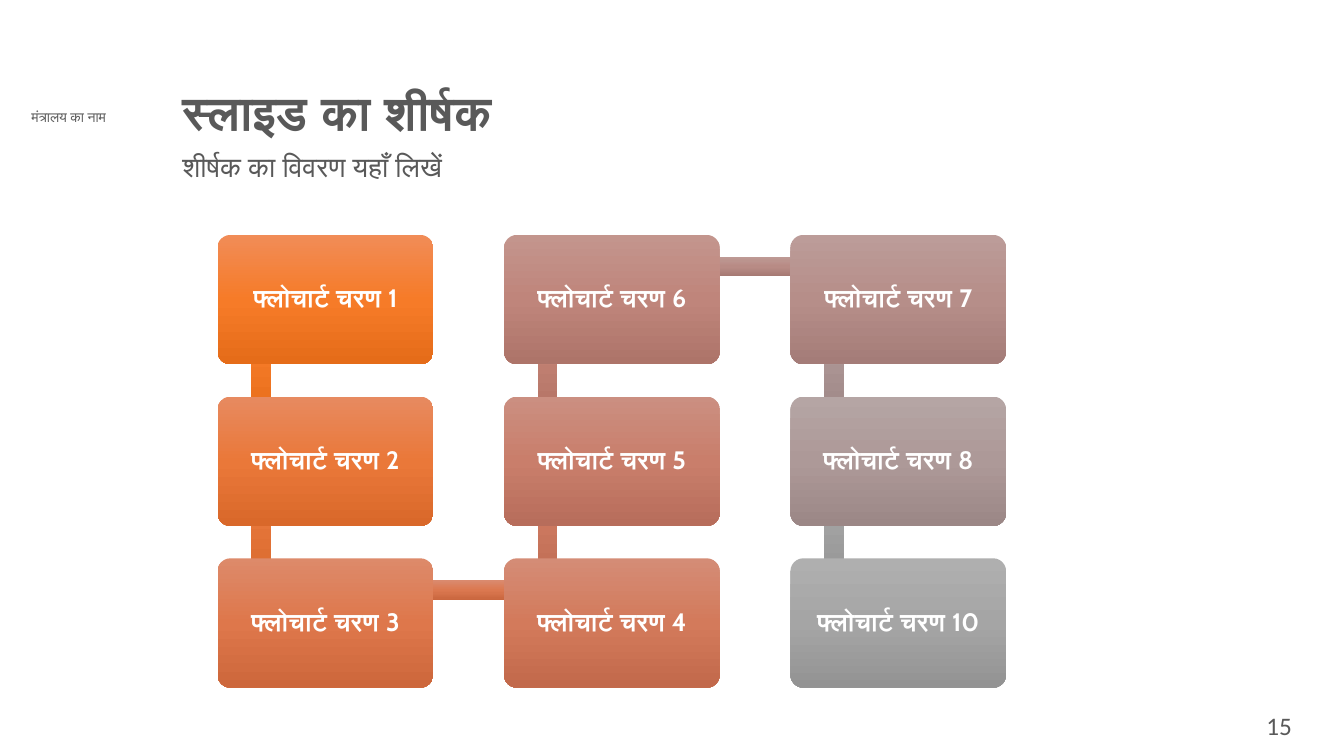
from lxml.etree import SubElement
from pptx import Presentation
from pptx.dml.color import RGBColor
from pptx.enum.shapes import MSO_SHAPE
from pptx.enum.text import MSO_ANCHOR, PP_ALIGN
from pptx.oxml.ns import qn
from pptx.util import Pt

GREY = RGBColor(0x59, 0x59, 0x59)
WHITE = RGBColor(0xFF, 0xFF, 0xFF)


def shades(*values):
    return [RGBColor.from_string(value) for value in values]


# Each step: number, column, row, box gradient, gradient of the bar to the next step
STEPS = [
    (1, 0, 0, shades("F18C57", "F67B28", "E56C19"), shades("F18C57", "F67B28", "E56C19")),
    (2, 0, 1, shades("E78A60", "EA7839", "D9682A"), shades("E58A61", "E8783C", "D7682C")),
    (3, 0, 2, shades("DD8A6A", "DE774B", "CD673B"), shades("DA8A6E", "DB7850", "CA673F")),
    (4, 1, 2, shades("D48C76", "D37A5B", "C2694B"), shades("D08D7B", "CF7B62", "BD6B52")),
    (5, 1, 1, shades("CB8F81", "C97E6B", "B76D5B"), shades("C79288", "C38274", "B17163")),
    (6, 1, 0, shades("C3958D", "BF857B", "AD7469"), shades("BE9A95", "B88B85", "A67A74")),
    (7, 2, 0, shades("BC9C99", "B68E89", "A47C78"), shades("B6A4A2", "AE9796", "9C8584")),
    (8, 2, 1, shades("B5A5A4", "AD9998", "9B8786"), shades("AFAFAF", "A5A5A5", "939393")),
    (10, 2, 2, shades("AFAFAF", "A5A5A5", "939393"), None),
]
BOX_WIDTH, BOX_HEIGHT = 154.1, 92.4
BAR_THICKNESS, BAR_INSET = 14, 0.9
ANCHOR_X, ANCHOR_Y = 31, 22.7  # where bars meet, from a box's top left corner


def write(shape, text, font="Calibri", size=18, color=GREY, bold=False,
          align=PP_ALIGN.LEFT, anchor=MSO_ANCHOR.TOP, spacing=None, inset=None):
    frame = shape.text_frame
    frame.word_wrap = True
    frame.vertical_anchor = anchor
    if inset is not None:
        frame.margin_left = frame.margin_right = Pt(inset)
        frame.margin_top = frame.margin_bottom = Pt(inset)
    paragraph = frame.paragraphs[0]
    paragraph.alignment = align
    paragraph.line_spacing = spacing
    run = paragraph.add_run()
    run.text = text
    run.font.name = font
    run.font.size = Pt(size)
    run.font.bold = bold
    run.font.color.rgb = color


def add_label(slide, left, top, width, height, text, **style):
    box = slide.shapes.add_textbox(Pt(left), Pt(top), Pt(width), Pt(height))
    write(box, text, **style)


def add_block(slide, kind, left, top, width, height, colors):
    """Add a borderless shape shaded from top to bottom."""
    shape = slide.shapes.add_shape(kind, Pt(left), Pt(top), Pt(width), Pt(height))
    shape.shadow.inherit = False
    shape.line.fill.background()
    shape.fill.gradient()
    gradient = shape.fill._fill._gradFill
    gradient.set("rotWithShape", "0")
    for child in list(gradient):
        gradient.remove(child)
    stops = SubElement(gradient, qn("a:gsLst"))
    for position, color in zip((0, 50000, 100000), colors):
        stop = SubElement(stops, qn("a:gs"), pos=str(position))
        SubElement(stop, qn("a:srgbClr"), val=str(color))
    SubElement(gradient, qn("a:lin"), ang="5400000", scaled="0")
    return shape


def add_header(slide, left, top, width):
    add_label(slide, left, top, width, 39.6, "स्लाइड का शीर्षक",
              size=34, bold=True, spacing=0.9)
    add_label(slide, left, top + 45.4, width, 45.4, "शीर्षक का विवरण यहाँ लिखें",
              size=20, spacing=0.9)


def add_flowchart(slide, left, top, width, height):
    pitch_x = (width - BOX_WIDTH) / 2
    pitch_y = (height - BOX_HEIGHT) / 2

    for index, (number, column, row, box_colors, bar_colors) in enumerate(STEPS):
        box_left = left + column * pitch_x
        box_top = top + row * pitch_y

        # Bar to the next step, behind both boxes
        if bar_colors:
            next_column, next_row = STEPS[index + 1][1:3]
            sideways = next_column != column
            length = (pitch_x if sideways else pitch_y) - BAR_INSET
            start_x = box_left + ANCHOR_X
            start_y = top + min(row, next_row) * pitch_y + ANCHOR_Y
            center_x = start_x + (length / 2 if sideways else 0)
            center_y = start_y + (0 if sideways else length / 2)
            bar = add_block(slide, MSO_SHAPE.RECTANGLE, center_x - length / 2,
                            center_y - BAR_THICKNESS / 2, length, BAR_THICKNESS,
                            bar_colors)
            if not sideways:
                bar.rotation = 90 if next_row > row else 270

        # Step box
        box = add_block(slide, MSO_SHAPE.ROUNDED_RECTANGLE, box_left, box_top,
                        BOX_WIDTH, BOX_HEIGHT, box_colors)
        box.adjustments[0] = 0.1
        write(box, f"फ्लोचार्ट चरण {number}", font="Cabin", color=WHITE, bold=True,
              align=PP_ALIGN.CENTER, anchor=MSO_ANCHOR.MIDDLE, spacing=0.9, inset=8)


def main():
    presentation = Presentation()
    presentation.slide_width = Pt(960)
    presentation.slide_height = Pt(540)
    slide = presentation.slides.add_slide(presentation.slide_layouts[6])

    # Ministry name
    add_label(slide, 2.2, 74.2, 93.6, 19.4, "मंत्रालय का नाम",
              font="Lato", size=10, align=PP_ALIGN.CENTER)
    add_flowchart(slide, 155.4, 167.8, 563.3, 323.4)
    add_header(slide, 123.1, 60.5, 691.9)
    # Page number
    add_label(slide, 871.2, 504, 85, 32.4, "15", align=PP_ALIGN.CENTER)

    presentation.save("out.pptx")


if __name__ == "__main__":
    main()
